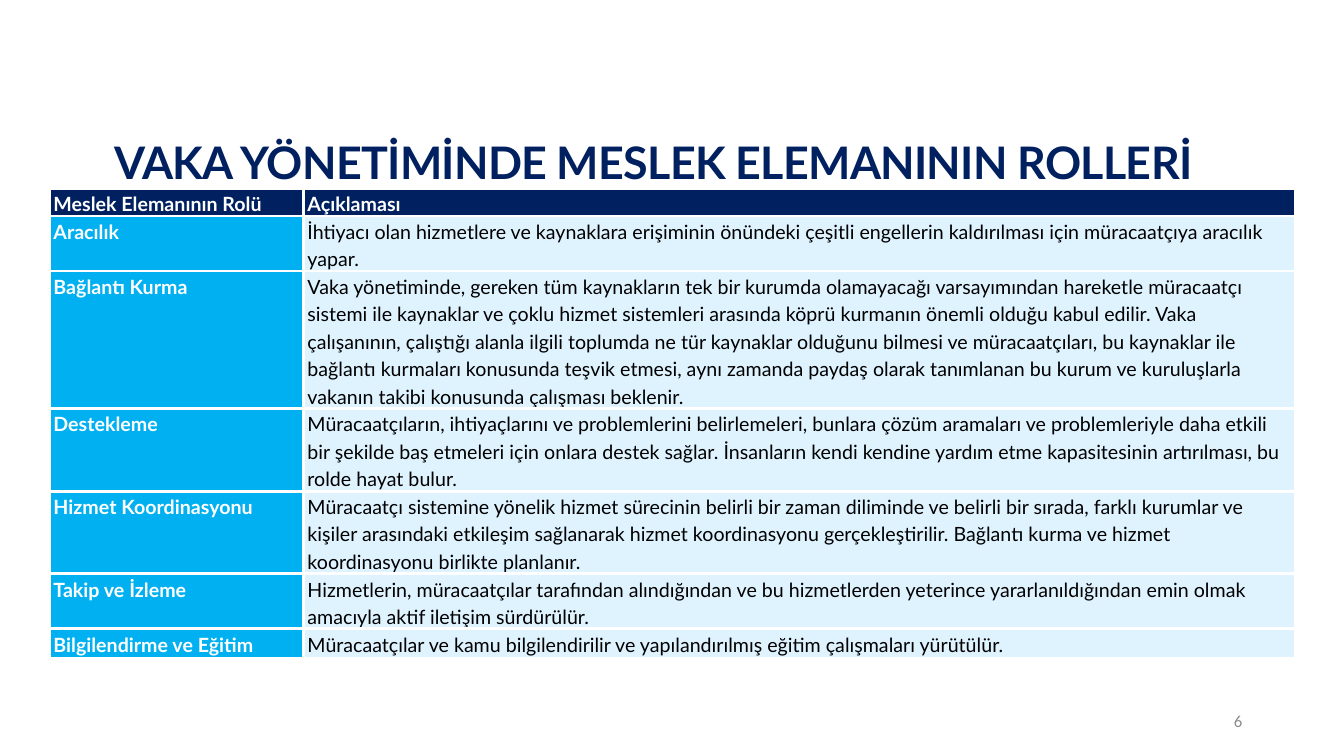
import pptx
import pptx.dml.color
import pptx.enum.text
import pptx.util
from lxml import etree
from pptx.oxml.ns import qn

PX = 9144  # EMU per px, 100 px to the inch

RGBColor = pptx.dml.color.RGBColor
NAVY = RGBColor(0x00, 0x20, 0x60)
CYAN = RGBColor(0x00, 0xB0, 0xF0)
PALE = RGBColor(0xDF, 0xF3, 0xFF)
WHITE = RGBColor(0xFF, 0xFF, 0xFF)
BLACK = RGBColor(0x00, 0x00, 0x00)
GREY = RGBColor(0x8C, 0x8C, 0x8C)

ALIGN = pptx.enum.text.PP_ALIGN
ANCHOR = pptx.enum.text.MSO_ANCHOR

COLUMN_WIDTHS = [252, 984]
ROW_HEIGHTS = [25, 45, 116, 69, 69, 51, 29]
ROLES = [
    ("Meslek Elemanının Rolü", "Açıklaması"),
    ("Aracılık",
     "İhtiyacı olan hizmetlere ve kaynaklara erişiminin önündeki çeşitli engellerin "
     "kaldırılması için müracaatçıya aracılık yapar."),
    ("Bağlantı Kurma",
     "Vaka yönetiminde, gereken tüm kaynakların tek bir kurumda olamayacağı varsayımından "
     "hareketle müracaatçı sistemi ile kaynaklar ve çoklu hizmet sistemleri arasında köprü "
     "kurmanın önemli olduğu kabul edilir. Vaka çalışanının, çalıştığı alanla ilgili toplumda "
     "ne tür kaynaklar olduğunu bilmesi ve müracaatçıları, bu kaynaklar ile bağlantı kurmaları "
     "konusunda teşvik etmesi, aynı zamanda paydaş olarak tanımlanan bu kurum ve kuruluşlarla "
     "vakanın takibi konusunda çalışması beklenir."),
    ("Destekleme",
     "Müracaatçıların, ihtiyaçlarını ve problemlerini belirlemeleri, bunlara çözüm aramaları "
     "ve problemleriyle daha etkili bir şekilde baş etmeleri için onlara destek sağlar. "
     "İnsanların kendi kendine yardım etme kapasitesinin artırılması, bu rolde hayat bulur."),
    ("Hizmet Koordinasyonu",
     "Müracaatçı sistemine yönelik hizmet sürecinin belirli bir zaman diliminde ve belirli bir "
     "sırada, farklı kurumlar ve kişiler arasındaki etkileşim sağlanarak hizmet koordinasyonu "
     "gerçekleştirilir. Bağlantı kurma ve hizmet koordinasyonu birlikte planlanır."),
    ("Takip ve İzleme",
     "Hizmetlerin, müracaatçılar tarafından alındığından ve bu hizmetlerden yeterince "
     "yararlanıldığından emin olmak amacıyla aktif iletişim sürdürülür."),
    ("Bilgilendirme ve Eğitim",
     "Müracaatçılar ve kamu bilgilendirilir ve yapılandırılmış eğitim çalışmaları yürütülür."),
]


def px(n):
    return pptx.util.Emu(n * PX)


def write(tf, text, font, size, color, bold=False, align=ALIGN.LEFT, spacing=None):
    tf.word_wrap = True
    p = tf.paragraphs[0]
    p.text = text
    p.alignment = align
    p.line_spacing = spacing
    r = p.runs[0]
    r.font.name = font
    r.font.size = pptx.util.Pt(size)
    r.font.bold = bold
    r.font.color.rgb = color
    return r


def add_text(s, left, top, width, height, text, *style, **options):
    sp = s.shapes.add_textbox(px(left), px(top), px(width), px(height))
    sp.text_frame.vertical_anchor = ANCHOR.MIDDLE
    return write(sp.text_frame, text, *style, **options)


def add_borders(cell, color, width):
    tcPr = cell._tc.get_or_add_tcPr()
    for side in ("lnL", "lnR", "lnT", "lnB"):
        ln = etree.SubElement(tcPr, qn("a:" + side), w=str(pptx.util.Pt(width)))
        fill = etree.SubElement(ln, qn("a:solidFill"))
        etree.SubElement(fill, qn("a:srgbClr"), val=str(color))


def fill_cell(cell, text, fill, color, bold, align):
    cell.margin_left = cell.margin_right = px(4)
    cell.margin_top = cell.margin_bottom = 0
    add_borders(cell, WHITE, 2.25)
    cell.fill.solid()
    cell.fill.fore_color.rgb = fill
    write(cell.text_frame, text, "Lato", 14, color, bold, align, 1.17)


def add_roles_table(s, left, top):
    frame = s.shapes.add_table(len(ROLES), len(COLUMN_WIDTHS), px(left), px(top),
                               px(sum(COLUMN_WIDTHS)), px(sum(ROW_HEIGHTS)))
    table = frame.table
    table.horz_banding = False
    for column, width in zip(table.columns, COLUMN_WIDTHS):
        column.width = px(width)
    for i, (row, height) in enumerate(zip(table.rows, ROW_HEIGHTS)):
        row.height = px(height)
        role, description = ROLES[i]
        header = i == 0
        fill_cell(row.cells[0], role, NAVY if header else CYAN, WHITE, True, ALIGN.LEFT)
        fill_cell(row.cells[1], description, NAVY if header else PALE,
                  WHITE if header else BLACK, header,
                  ALIGN.JUSTIFY if header else ALIGN.LEFT)


def main():
    prs = pptx.Presentation()
    prs.slide_width, prs.slide_height = px(1333), px(750)
    s = prs.slides.add_slide(prs.slide_layouts[6])
    title = add_text(s, 73, 127, 1150, 73, "VAKA YÖNETİMİNDE MESLEK ELEMANININ ROLLERİ",
                     "Lato", 32, NAVY, bold=True, align=ALIGN.CENTER, spacing=0.9)
    title.font._element.set("spc", "-50")
    add_roles_table(s, 49, 187)
    add_text(s, 942, 695, 300, 40, "6", "Calibri", 12, GREY, align=ALIGN.RIGHT)
    prs.save("out.pptx")


if __name__ == "__main__":
    main()
